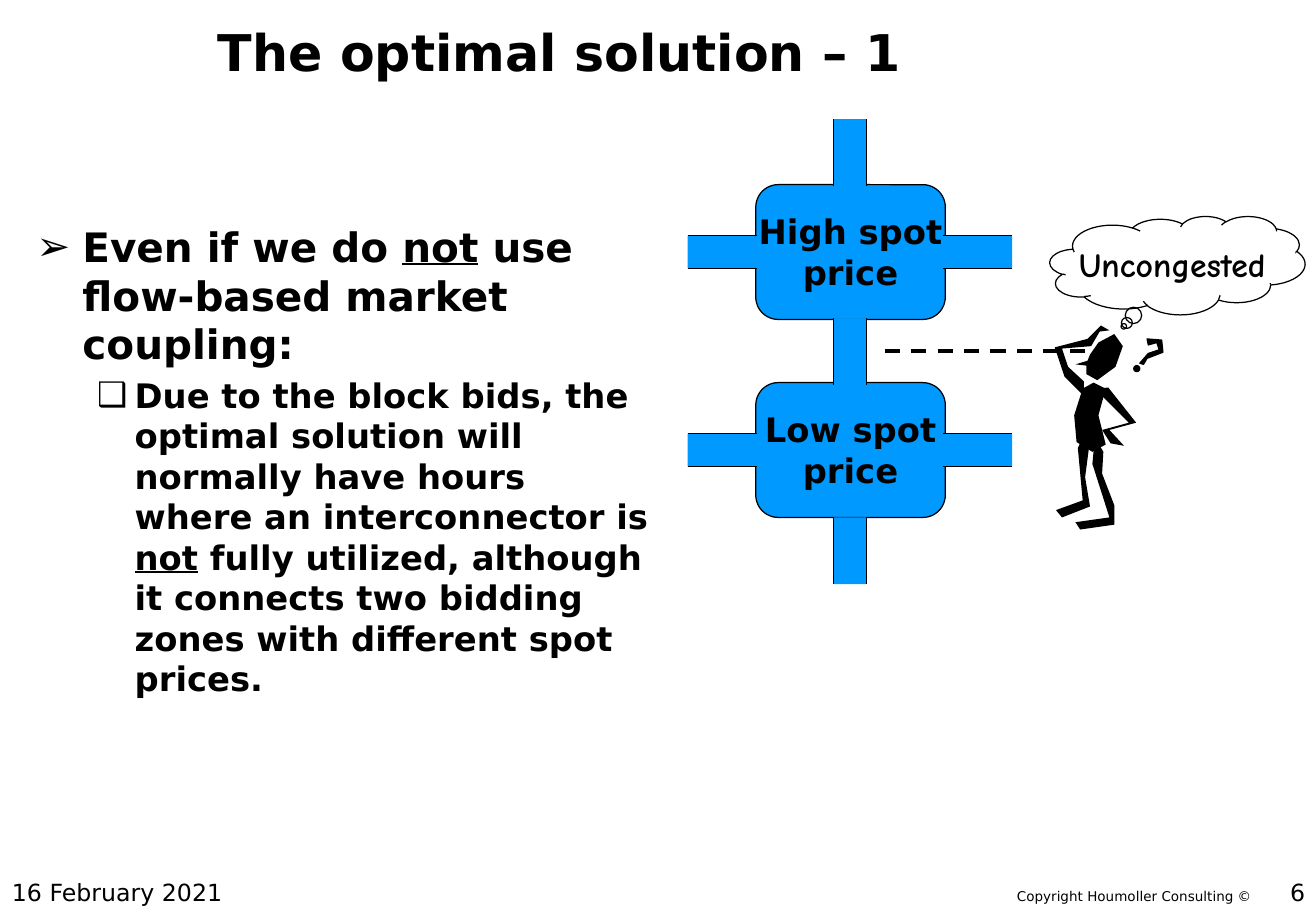
"""Build the slide on the optimal solution for two price zones."""
from lxml import etree
from pptx import Presentation
from pptx.dml.color import RGBColor
from pptx.enum.dml import MSO_LINE
from pptx.enum.shapes import MSO_CONNECTOR as CONN, MSO_SHAPE as SHAPE
from pptx.enum.text import MSO_ANCHOR as ANCHOR, PP_ALIGN as ALIGN
from pptx.oxml.ns import qn
from pptx.util import Inches, Pt

COLORS = {"ink": "000000", "zone": "0099FF", "paper": "FFFFFF"}

FIGURE = {
    "head": [(897, 292), (904, 282), (917, 275), (924, 285), (918, 302),
             (903, 313), (894, 308), (894, 301), (885, 300), (895, 297)],
    "body": [(891, 320), (900, 315), (910, 320), (904, 342), (910, 366),
             (899, 372), (886, 364), (884, 342)],
    "right arm": [(904, 320), (912, 319), (935, 348), (913, 354), (925, 367),
                  (914, 365), (907, 354), (929, 348), (907, 326)],
    "right leg": [(901, 360), (908, 372), (907, 390), (917, 416), (917, 432),
                  (889, 436), (885, 430), (913, 426), (899, 382)],
    "left leg": [(890, 362), (896, 370), (893, 393), (897, 417), (874, 426),
                 (869, 420), (891, 412), (887, 369)],
    "left arm": [(892, 326), (892, 314), (879, 302), (874, 287), (898, 285),
                 (905, 273), (913, 272), (906, 268), (895, 279), (868, 286),
                 (876, 310)],
    "question mark": [(944, 279), (956, 280), (957, 290), (944, 295), (941, 300),
                      (938, 299), (945, 291), (954, 288), (952, 282), (945, 284)],
}


class Deck:
    """Hold the style and the current slide."""

    def __init__(self, width, height):
        self.prs = Presentation()
        self.prs.slide_width, self.prs.slide_height = Inches(width), Inches(height)
        self.s = self.prs.slides.add_slide(self.prs.slide_layouts[6])
        self.font = {"name": "DejaVu Sans", "size": 20, "bold": True}

    def color(self, name):
        return RGBColor.from_string(COLORS[name])

    def paint(self, sp, fill=None, line=None):
        sp.shadow.inherit = False
        if fill:
            sp.fill.solid()
            sp.fill.fore_color.rgb = self.color(fill)
        else:
            sp.fill.background()
        if line:
            sp.line.color.rgb = self.color(line)
            sp.line.width = Pt(0.75)
        else:
            sp.line.fill.background()
        return sp

    def shape(self, kind, box, fill=None, line=None):
        sp = self.s.shapes.add_shape(kind, *map(Inches, box))
        return self.paint(sp, fill, line)

    def outline(self, points, line=None):
        fb = self.s.shapes.build_freeform(*points[0], scale=Inches(0.01))
        fb.add_line_segments(points[1:], close=True)
        return self.paint(fb.convert_to_shape(), "ink", line)

    def line(self, x1, y1, x2, y2, width=0.75, dash=None):
        c = self.s.shapes.add_connector(CONN.STRAIGHT, *map(Inches, (x1, y1, x2, y2)))
        c.line.color.rgb = self.color("ink")
        c.line.width = Pt(width)
        if dash:
            c.line.dash_style = dash
        etree.SubElement(c._element.spPr, qn("a:effectLst"))

    def text(self, box, paragraphs, align=ALIGN.LEFT, anchor=ANCHOR.TOP, wrap=False, **fmt):
        tf = self.s.shapes.add_textbox(*map(Inches, box)).text_frame
        tf.word_wrap, tf.vertical_anchor = wrap, anchor
        for i, words in enumerate(paragraphs):
            p = tf.add_paragraph() if i else tf.paragraphs[0]
            p.alignment = align
            self.runs(p, [words], **fmt)
        return tf

    def runs(self, p, words, underlined=(), **fmt):
        fmt = {**self.font, **fmt}
        for word in words:
            r = p.add_run()
            r.text = word
            values = {**fmt, "size": Pt(fmt["size"]), "underline": word in underlined}
            for key, value in values.items():
                setattr(r.font, key, value)
            r.font.color.rgb = self.color("ink")

    def bullets(self, box, items):
        tf = self.text(box, [], wrap=True)
        for i, (mark, margin, hang, size, words) in enumerate(items):
            p = tf.add_paragraph() if i else tf.paragraphs[0]
            pPr = p._p.get_or_add_pPr()
            for key, value in {"marL": margin, "indent": -hang}.items():
                pPr.set(key, str(Inches(value)))
            etree.SubElement(pPr, qn("a:buFont")).set("typeface", self.font["name"])
            etree.SubElement(pPr, qn("a:buChar")).set("char", mark)
            p.level = i
            p.space_before = Pt(4 * i)
            self.runs(p, words, ("not",), size=size)

    def link(self, x, y, w, h):
        self.shape(SHAPE.RECTANGLE, (x, y, w, h), "zone")
        if w > h:
            for edge in (y, y + h):
                self.line(x, edge, x + w, edge)
        else:
            for edge in (x, x + w):
                self.line(edge, y, edge, y + h)


def main():
    d = Deck(10.83, 7.5)
    d.text((8.27, 7.26, 2.16, 0.24), ["Copyright Houmoller Consulting ©"], size=8, bold=False)
    d.text((0, 0, 9.21, 0.85), ["The optimal solution – 1"], ALIGN.CENTER,
           ANCHOR.MIDDLE, True, size=30)
    d.bullets((0.2, 1.78, 5.28, 4.66), [
        ("➢", 0.38, 0.38, 24,
         ["Even if we do ", "not", " use flow-based market coupling:"]),
        ("❑", 0.81, 0.31, 20,
         ["Due to the block bids, the optimal solution will normally have hours "
          "where an interconnector is ", "not",
          " fully utilized, although it connects two bidding zones with different "
          "spot prices."])])
    for x, words, align in ((0, "16 February 2021", ALIGN.LEFT), (8.58, "6", ALIGN.RIGHT)):
        d.text((x, 7.09, 2.26, 0.5), [words], align, ANCHOR.MIDDLE, size=14, bold=False)

    step = 1.63
    for i, (level, width) in enumerate((("High", 1.73), ("Low", 1.63))):
        y = 1.52 + step * i
        d.shape(SHAPE.ROUNDED_RECTANGLE, (6.22, y, 1.56, 1.11), "zone", "ink")
        d.text((7 - width / 2, y + 0.17, width, 0.77), [f"{level} spot", "price"], ALIGN.CENTER)
        for x in (5.66, 7.76):
            d.link(x, y + 0.42, 0.57, 0.27)
    for i in range(3):
        d.link(6.86, 0.98 + 1.64 * i, 0.27, 0.55)
    d.line(7.28, 2.89, 8.98, 2.89, 2.25, MSO_LINE.DASH)

    for part, points in FIGURE.items():
        d.outline(points, "ink" if part == "question mark" else None)
    d.shape(SHAPE.OVAL, (9.33, 3.01, 0.05, 0.05), "ink", "ink")
    cloud = d.shape(SHAPE.CLOUD_CALLOUT, (8.64, 1.78, 2.1, 0.81), line="ink")
    cloud.adjustments[0], cloud.adjustments[1] = -0.21, 0.62
    for box in ((10.27, 2.18, 0.22, 0.15), (8.77, 2.25, 0.26, 0.13), (10.44, 2.07, 0.22, 0.15)):
        d.shape(SHAPE.RECTANGLE, box, "paper")
    d.text((8.78, 1.96, 1.89, 0.44), ["Uncongested"], name="Comic Neue")
    d.prs.save("out.pptx")


if __name__ == "__main__":
    main()
